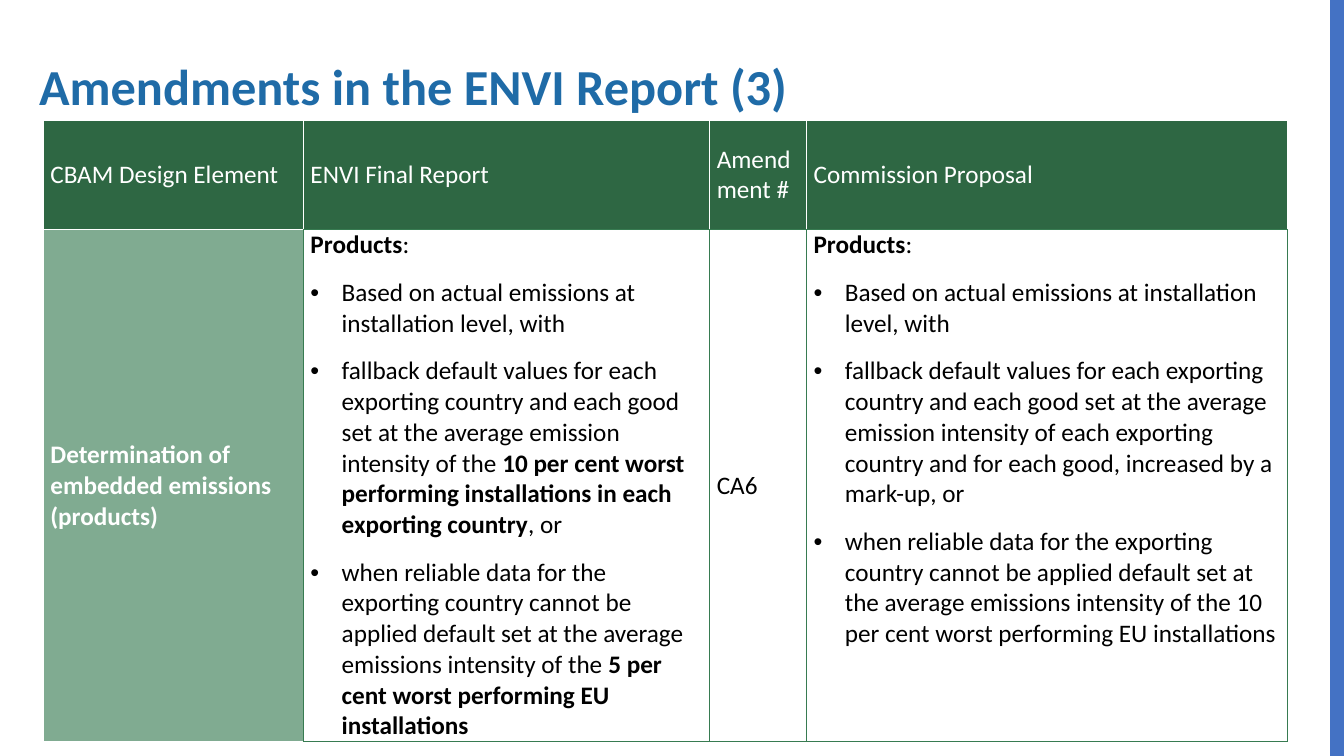
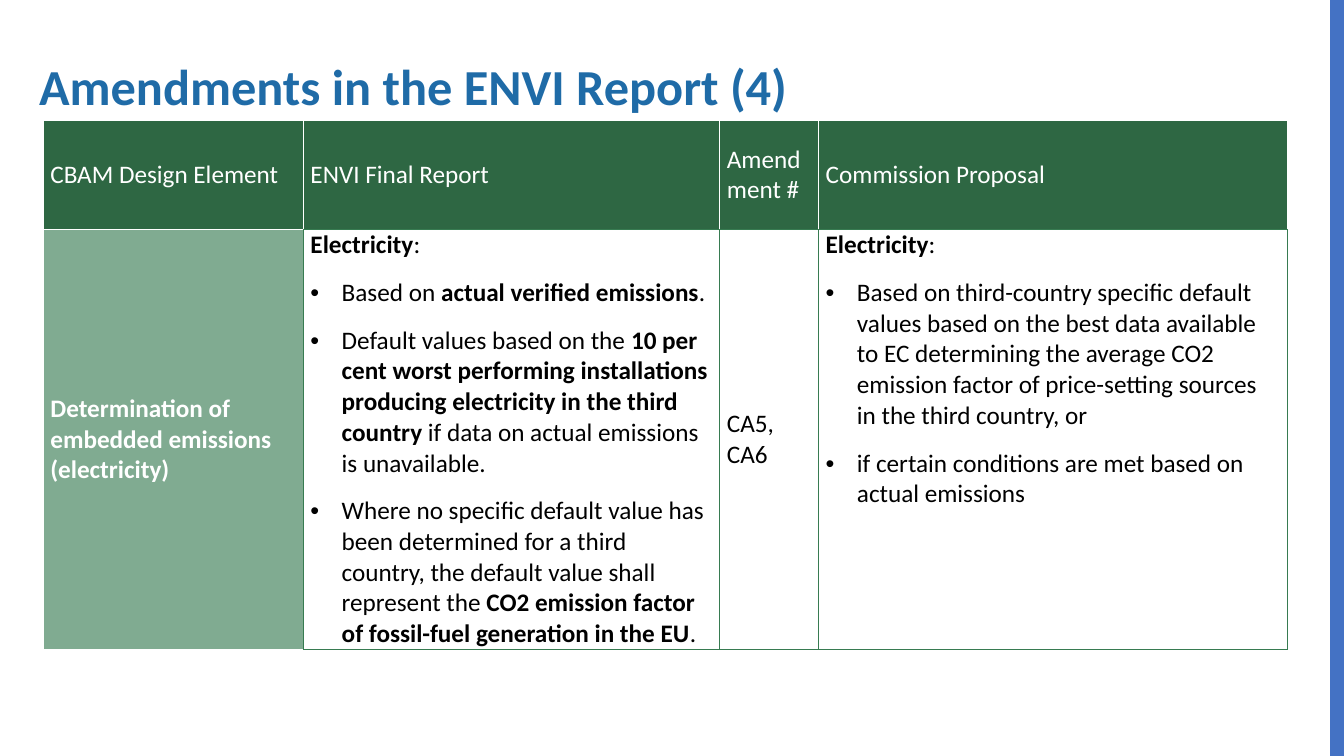
from lxml.etree import SubElement
from pptx import Presentation
from pptx.dml.color import RGBColor
from pptx.enum.shapes import MSO_CONNECTOR
from pptx.enum.text import MSO_ANCHOR as Anchor
from pptx.oxml.ns import qn
from pptx.util import Inches, Pt

WHITE = RGBColor(0xFF, 0xFF, 0xFF)
BLACK = RGBColor(0x00, 0x00, 0x00)
TITLE_BLUE = RGBColor(0x1F, 0x6B, 0xA7)
EDGE_BLUE = RGBColor(0x44, 0x72, 0xC4)
HEADER_GREEN = RGBColor(0x2E, 0x67, 0x43)
GREEN = RGBColor(0x37, 0x7B, 0x51)

FONT = "Calibri"
SLIDE_WIDTH, SLIDE_HEIGHT = 13.33, 7.5
EDGE_X = 13.27
TABLE_LEFT, TABLE_TOP, TABLE_WIDTH = 0.43, 1.19, 12.34
LABEL_WIDTH, HEADER_HEIGHT = 2.58, 1.09
CELL_INSET, BULLET_INDENT = 0.07, 0.31

HEADERS = ["CBAM Design Element", "ENVI Final Report", "Amendment #", "Commission Proposal"]
WHITE_BORDERS = {"L": WHITE, "R": WHITE, "T": WHITE, "B": WHITE}
GREEN_BORDERS = {"L": GREEN, "R": GREEN, "T": GREEN, "B": GREEN}
LABEL_BORDERS = {**WHITE_BORDERS, "R": GREEN}

# Asterisks enclose bold words; the first paragraph of a list is its heading.
PAGES = [
    {
        "title": "Amendments in the ENVI Report (3)",
        "widths": (4.03, 0.96),
        "height": 5.0,
        "label": "Determination of embedded emissions (products)",
        "report": [
            "*Products*:",
            "Based on actual emissions at installation level, with",
            "fallback default values for each exporting country and each good set at the "
            "average emission intensity of the *10 per cent worst performing installations "
            "in each exporting country*, or",
            "when reliable data for the exporting country cannot be applied default set at "
            "the average emissions intensity of the *5 per cent worst performing EU "
            "installations*",
        ],
        "amendment": "CA6",
        "proposal": [
            "*Products*:",
            "Based on actual emissions at installation level, with",
            "fallback default values for each exporting country and each good set at the "
            "average emission intensity of each exporting country and for each good, "
            "increased by a mark-up, or",
            "when reliable data for the exporting country cannot be applied default set at "
            "the average emissions intensity of the 10 per cent worst performing EU "
            "installations",
        ],
    },
    {
        "title": "Amendments in the ENVI Report (4)",
        "widths": (4.13, 0.98),
        "height": 4.1,
        "label": "Determination of embedded emissions (electricity)",
        "report": [
            "*Electricity*:",
            "Based on *actual verified emissions*.",
            "Default values based on the *10 per cent worst performing installations "
            "producing electricity in the third country *if data on actual emissions is "
            "unavailable.",
            "Where no specific default value has been determined for a third country, the "
            "default value shall represent the *CO2 emission factor of fossil-fuel "
            "generation in the EU*.",
        ],
        "amendment": "CA5, CA6",
        "proposal": [
            "*Electricity*:",
            "Based on third-country specific default values based on the best data "
            "available to EC determining the average CO2 emission factor of price-setting "
            "sources in the third country, or",
            "if certain conditions are met based on actual emissions",
        ],
    },
]


def add_spans(para, text, size, color):
    """Add the text run by run, with the words between asterisks in bold."""
    for index, part in enumerate(text.split("*")):
        if part:
            span = para.add_run()
            span.text = part
            span.font.name, span.font.size = FONT, Pt(size)
            span.font.bold = index % 2 == 1
            span.font.color.rgb = color


def add_bullet(para):
    props = para._p.get_or_add_pPr()
    props.set("marL", str(Inches(BULLET_INDENT)))
    props.set("indent", str(-Inches(BULLET_INDENT)))
    SubElement(props, qn("a:buFont"), typeface="Arial")
    SubElement(props, qn("a:buChar"), char="•")


def set_borders(cell, borders):
    props = cell._tc.get_or_add_tcPr()
    for side, color in borders.items():
        line = SubElement(props, qn(f"a:ln{side}"), w=str(Pt(1)))
        fill = SubElement(line, qn("a:solidFill"))
        SubElement(fill, qn("a:srgbClr"), val=str(color))


def fill_cell(cell, paragraphs, borders, fill=None, opacity=100, color=BLACK,
              anchor=Anchor.MIDDLE, space=6):
    set_borders(cell, borders)
    if fill is None:
        cell.fill.background()
    else:
        cell.fill.solid()
        cell.fill.fore_color.rgb = fill
        if opacity < 100:
            tint = cell._tc.tcPr.find(qn("a:solidFill")).find(qn("a:srgbClr"))
            SubElement(tint, qn("a:alpha"), val=str(opacity * 1000))
    cell.margin_left = cell.margin_right = Inches(CELL_INSET)
    cell.margin_top = cell.margin_bottom = 0
    cell.vertical_anchor = anchor
    frame = cell.text_frame
    for index, text in enumerate(paragraphs):
        para = frame.add_paragraph() if index else frame.paragraphs[0]
        if index:
            add_bullet(para)
            para.space_before = Pt(space)
        para.space_after = Pt(space)
        add_spans(para, text, 18, color)


def add_edge(page):
    x = Inches(EDGE_X)
    edge = page.shapes.add_connector(MSO_CONNECTOR.STRAIGHT, x, 0, x, Inches(SLIDE_HEIGHT))
    edge.line.color.rgb = EDGE_BLUE
    edge.line.width = Pt(12)
    SubElement(edge._element.spPr, qn("a:effectLst"))


def add_title(page, text):
    box = page.shapes.add_textbox(Inches(0.29), Inches(0.46), Inches(11.96), Inches(0.73))
    box.text_frame.word_wrap = True
    para = box.text_frame.paragraphs[0]
    para.line_spacing = 1.07
    add_spans(para, f"*{text}*", 36, TITLE_BLUE)


def add_comparison(page, content):
    """Add the table that sets the report beside the proposal."""
    widths = [LABEL_WIDTH, *content["widths"]]
    widths.append(TABLE_WIDTH - sum(widths))
    heights = [HEADER_HEIGHT, content["height"]]
    table = page.shapes.add_table(
        len(heights), len(widths), Inches(TABLE_LEFT), Inches(TABLE_TOP),
        Inches(TABLE_WIDTH), Inches(sum(heights))).table
    table.first_row = table.horz_banding = False
    for column, width in zip(table.columns, widths):
        column.width = Inches(width)
    for row, height in zip(table.rows, heights):
        row.height = Inches(height)

    for index, header in enumerate(HEADERS):
        fill_cell(table.cell(0, index), [header], WHITE_BORDERS,
                  fill=HEADER_GREEN, color=WHITE, space=3)
    label, report, amendment, proposal = table.rows[1].cells
    fill_cell(label, [f"*{content['label']}*"], LABEL_BORDERS,
              fill=GREEN, opacity=63, color=WHITE)
    fill_cell(report, content["report"], GREEN_BORDERS)
    fill_cell(amendment, [content["amendment"]], GREEN_BORDERS)
    fill_cell(proposal, content["proposal"], GREEN_BORDERS, anchor=Anchor.TOP)


def main():
    deck = Presentation()
    deck.slide_width, deck.slide_height = Inches(SLIDE_WIDTH), Inches(SLIDE_HEIGHT)
    for content in PAGES:
        page = deck.slides.add_slide(deck.slide_layouts[6])
        add_edge(page)
        add_comparison(page, content)
        add_title(page, content["title"])
    deck.save("out.pptx")


if __name__ == "__main__":
    main()
